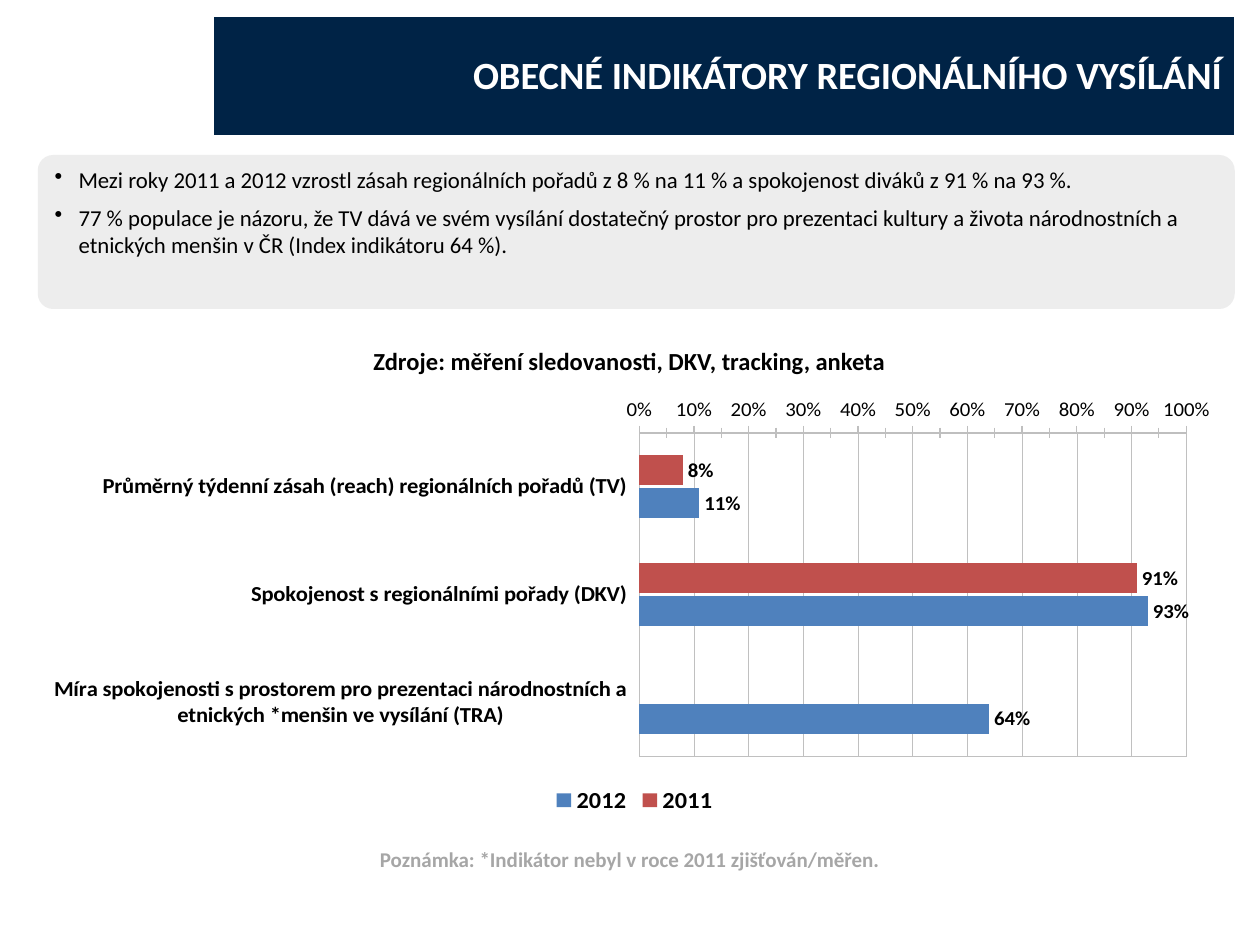
"""Build a slide on regional broadcasting indicators with a clustered bar chart."""
from lxml import etree
from pptx import Presentation
from pptx import util as u
from pptx.chart.data import CategoryChartData
from pptx.dml.color import RGBColor
from pptx.enum import chart as ch, shapes, text
from pptx.oxml import parse_xml
from pptx.oxml.ns import nsdecls, qn

W, H = 10, 7.5
FONT = "Calibri"
COLORS = {"navy": "002346", "white": "FFFFFF", "black": "000000", "panel": "D9D9D9",
          "note": "A6A6A6", "axis": "BFBFBF", "grid": "C0C0C0",
          "2011": "C0504D", "2012": "4F81BD"}
TITLE = "OBECNÉ INDIKÁTORY REGIONÁLNÍHO VYSÍLÁNÍ"
BULLETS = [
    "Mezi roky 2011 a 2012 vzrostl zásah regionálních pořadů z 8 % na 11 % "
    "a spokojenost diváků z 91 % na 93 %.",
    "77 % populace je názoru, že TV dává ve svém vysílání dostatečný prostor pro prezentaci "
    "kultury a života národnostních a etnických menšin v ČR (Index indikátoru 64 %).",
]
SOURCES = "Zdroje: měření sledovanosti, DKV, tracking, anketa"
NOTE = "Poznámka: *Indikátor nebyl v roce 2011 zjišťován/měřen."
CATEGORIES = [
    "Průměrný týdenní zásah (reach) regionálních pořadů (TV)",
    "Spokojenost s regionálními pořady (DKV)",
    "Míra spokojenosti s prostorem pro prezentaci národnostních a "
    "etnických *menšin ve vysílání (TRA)",
]
SERIES = {"2011": (0.08, 0.91, None), "2012": (0.11, 0.93, 0.64)}
BOXES = {"title": (0.169, 0.017, 0.811, 0.127), "bullets": (0.03, 0.164, 0.95, 0.163),
         "sources": (0.011, 0.348, 0.977, 0.068), "chart": (0.043, 0.421, 0.917, 0.446),
         "note": (0.043, 0.888, 0.914, 0.043)}
PLOT = {"x": 0.504, "y": 0.023, "w": 0.478, "h": 0.819}


def box(name):
    return [u.Inches(share * side) for share, side in zip(BOXES[name], (W, H, W, H))]


def rgb(name):
    return RGBColor.from_string(COLORS[name])


def style(font, size, color="black", bold=False):
    font.name, font.size, font.bold = FONT, u.Pt(size), bold
    font.color.rgb = rgb(color)


def line(fmt, color, width):
    fmt.line.color.rgb = rgb(color)
    fmt.line.width = u.Pt(width)


def add_panel(slide, name, lines, size, color="black", bold=False, fill=None,
              align=text.PP_ALIGN.CENTER, anchor=text.MSO_ANCHOR.MIDDLE):
    sp = slide.shapes.add_shape(shapes.MSO_SHAPE.ROUNDED_RECTANGLE, *box(name))
    sp.adjustments[0] = 0.1
    sp.shadow.inherit = False
    sp.line.fill.background()
    if fill:
        sp.fill.solid()
        sp.fill.fore_color.rgb = rgb(fill)
    else:
        sp.fill.background()
    tf = sp.text_frame
    tf.word_wrap, tf.vertical_anchor = True, anchor
    for i, words in enumerate(lines):
        p = tf.add_paragraph() if i else tf.paragraphs[0]
        p.text, p.alignment = words, align
        style(p.font, size, color, bold)
    return sp


def add_title(slide):
    table = slide.shapes.add_table(1, 1, *box("title")).table
    cell = table.cell(0, 0)
    cell.fill.solid()
    cell.fill.fore_color.rgb = rgb("navy")
    cell.vertical_anchor = text.MSO_ANCHOR.MIDDLE
    p = cell.text_frame.paragraphs[0]
    p.text, p.alignment = TITLE, text.PP_ALIGN.RIGHT
    style(p.font, 22, "white", True)


def add_bullets(slide):
    sp = add_panel(slide, "bullets", BULLETS, 13, fill="panel",
                   align=text.PP_ALIGN.LEFT, anchor=text.MSO_ANCHOR.TOP)
    tint = next(sp.fill._xPr.iter(qn("a:srgbClr")))
    etree.SubElement(tint, qn("a:alpha"), val="46000")
    indent = u.Inches(0.19)
    for p in sp.text_frame.paragraphs:
        p.space_before = p.space_after = u.Pt(3)
        pPr = p._p.get_or_add_pPr()
        pPr.set("marL", str(indent))
        pPr.set("indent", str(-indent))
        bullet = etree.Element(qn("a:buChar"), char="•")
        pPr.insert_element_before(bullet, "a:tabLst", "a:defRPr", "a:extLst")


def set_plot_area(chart):
    area = chart._chartSpace.chart.plotArea
    for old in area.findall(qn("c:layout")):
        area.remove(old)
    places = "".join(f'<c:{k}Mode val="edge"/>' for k in "xy")
    places += "".join(f'<c:{k} val="{v}"/>' for k, v in PLOT.items())
    area.insert(0, parse_xml(
        f'<c:layout {nsdecls("c")}><c:manualLayout><c:layoutTarget val="inner"/>'
        f'{places}</c:manualLayout></c:layout>'))
    area.append(parse_xml(
        f'<c:spPr {nsdecls("c", "a")}><a:noFill/><a:ln w="3175"><a:solidFill>'
        f'<a:srgbClr val="{COLORS["grid"]}"/></a:solidFill></a:ln></c:spPr>'))


def add_bar_chart(slide):
    data = CategoryChartData(number_format="0%")
    data.categories = CATEGORIES
    for name, values in SERIES.items():
        data.add_series(name, values)
    chart = slide.shapes.add_chart(ch.XL_CHART_TYPE.BAR_CLUSTERED, *box("chart"), data).chart
    chart.has_title = False
    style(chart.font, 18, bold=True)
    set_plot_area(chart)

    plot = chart.plots[0]
    plot.gap_width, plot.overlap, plot.vary_by_categories = 150, -10, False
    for series in plot.series:
        series.format.fill.solid()
        series.format.fill.fore_color.rgb = rgb(series.name)
        series.invert_if_negative = False
        labels = series.data_labels
        labels.show_value = True
        labels.number_format, labels.number_format_is_linked = "0%", False
        labels.position = ch.XL_LABEL_POSITION.OUTSIDE_END
        style(labels.font, 12, bold=True)

    cat, val = chart.category_axis, chart.value_axis
    cat.reverse_order = True
    cat.format.line.fill.background()
    style(cat.tick_labels.font, 13, bold=True)
    val.minimum_scale, val.maximum_scale, val.major_unit, val.minor_unit = 0, 1, 0.1, 0.05
    val.major_tick_mark, val.minor_tick_mark = ch.XL_TICK_MARK.OUTSIDE, ch.XL_TICK_MARK.CROSS
    val.tick_labels.number_format, val.tick_labels.number_format_is_linked = "0%", False
    style(val.tick_labels.font, 12)
    line(val.format, "axis", 0.75)
    line(val.major_gridlines.format, "grid", 0.25)

    chart.has_legend = True
    chart.legend.position = ch.XL_LEGEND_POSITION.BOTTOM
    chart.legend.include_in_layout = True
    style(chart.legend.font, 14, bold=True)


def main():
    prs = Presentation()
    prs.slide_width, prs.slide_height = u.Inches(W), u.Inches(H)
    s = prs.slides.add_slide(prs.slide_layouts[6])
    add_title(s)
    add_bullets(s)
    add_bar_chart(s)
    add_panel(s, "sources", [SOURCES], 14, bold=True, fill="white")
    add_panel(s, "note", [NOTE], 12, "note", True)
    prs.save("out.pptx")


if __name__ == "__main__":
    main()
